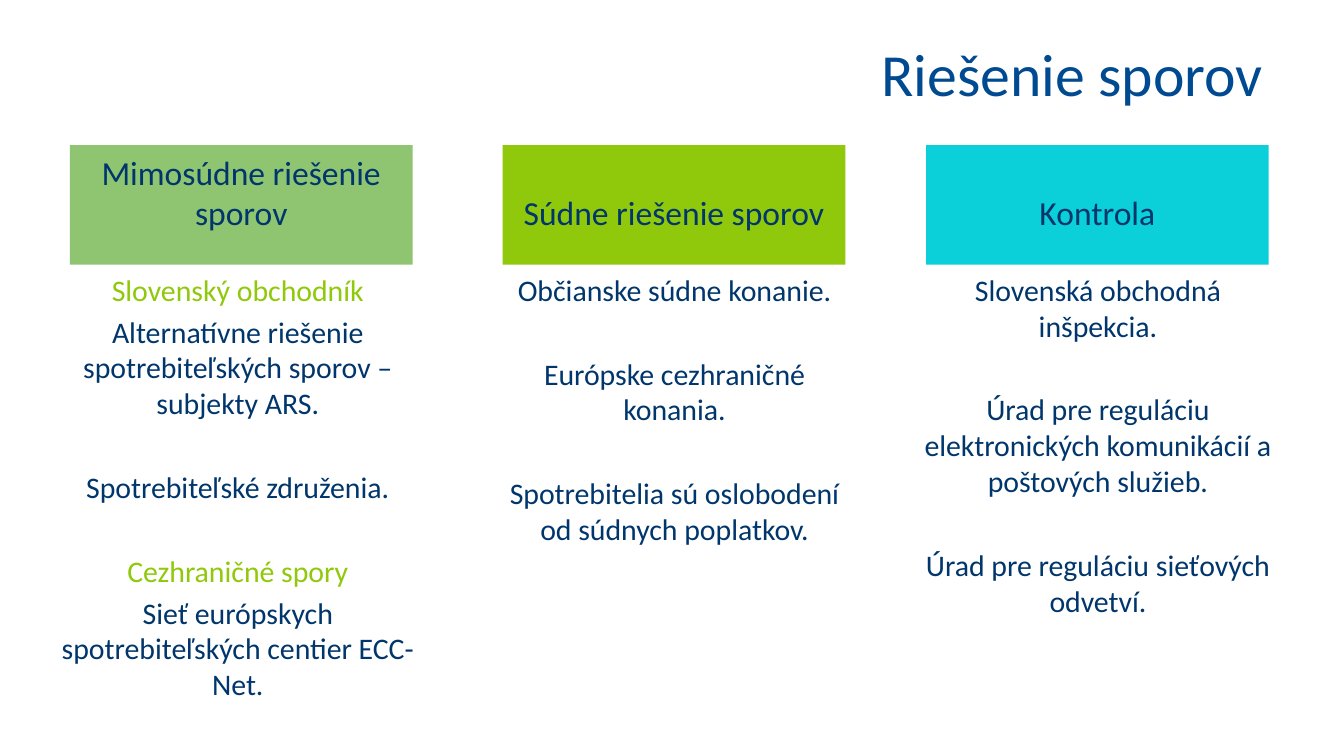
from pptx import Presentation
from pptx.dml.color import RGBColor
from pptx.enum.shapes import MSO_SHAPE as Shape
from pptx.enum.text import MSO_ANCHOR as Anchor, PP_ALIGN as Align
from pptx.util import Inches, Pt

NAVY, LIME = "00366C", "90C90B"
HEAD_TOP, HEAD_WIDTH, HEAD_HEIGHT = 1.08, 2.55, 0.89
LIST_TOP, LIST_WIDTH, LIST_HEIGHT = HEAD_TOP + HEAD_HEIGHT, 2.84, 3.91
TIGHT, WIDE = 3.2, 25.7


def colour(code):
    return RGBColor.from_string(code)


def write(paragraph, text, size, code, align=Align.CENTER):
    paragraph.text = text
    paragraph.alignment = align
    for run in paragraph.runs:
        run.font.name = "Calibri"
        run.font.size = Pt(size)
        run.font.color.rgb = colour(code)


columns = [
    (0.52, 0.35, "Mimosúdne riešenie sporov", "8FC570", 1, [
        ("Slovenský obchodník", LIME, 0),
        ("Alternatívne riešenie spotrebiteľských sporov – subjekty ARS.", NAVY, TIGHT),
        ("Spotrebiteľské združenia.", NAVY, WIDE),
        ("Cezhraničné spory", LIME, WIDE),
        ("Sieť európskych spotrebiteľských centier ECC-Net.", NAVY, TIGHT),
    ]),
    (3.74, 3.6, "Súdne riešenie sporov", LIME, 2, [
        ("Občianske súdne konanie.", NAVY, 0),
        ("Európske cezhraničné konania.", NAVY, WIDE),
        ("Spotrebitelia sú oslobodení od súdnych poplatkov.", NAVY, WIDE),
    ]),
    (6.89, 6.75, "Kontrola", "0BD0D9", 2, [
        ("Slovenská obchodná inšpekcia.", NAVY, 0),
        ("Úrad pre reguláciu elektronických komunikácií a poštových služieb.", NAVY, WIDE),
        ("Úrad pre reguláciu sieťových odvetví.", NAVY, WIDE),
    ]),
]

deck = Presentation()
deck.slide_width = Inches(10)
deck.slide_height = deck.slide_width * 9 // 16
slide = deck.slides.add_slide(deck.slide_layouts[5])

title = slide.shapes.title
title.left, title.top = Inches(0.2), Inches(0.23)
title.width, title.height = Inches(9.3), Inches(0.62)
title.text_frame.vertical_anchor = Anchor.MIDDLE
write(title.text_frame.paragraphs[0], "Riešenie sporov", 32, "004A92", Align.RIGHT)

for head_left, list_left, heading, fill, spacing, entries in columns:
    header = slide.shapes.add_shape(
        Shape.RECTANGLE, Inches(head_left), Inches(HEAD_TOP), Inches(HEAD_WIDTH), Inches(HEAD_HEIGHT))
    header.shadow.inherit = False
    header.fill.solid()
    header.fill.fore_color.rgb = colour(fill)
    header.line.fill.background()
    header.text_frame.vertical_anchor = Anchor.TOP
    heading_line = header.text_frame.paragraphs[0]
    write(heading_line, heading, 18, NAVY)
    heading_line.line_spacing = spacing

    remedies = slide.shapes.add_textbox(
        Inches(list_left), Inches(LIST_TOP), Inches(LIST_WIDTH), Inches(LIST_HEIGHT)).text_frame
    remedies.word_wrap = True
    for number, (entry, code, gap) in enumerate(entries):
        remedy = remedies.add_paragraph() if number else remedies.paragraphs[0]
        write(remedy, entry, 16, code)
        remedy.space_before = Pt(gap)

deck.save("out.pptx")
